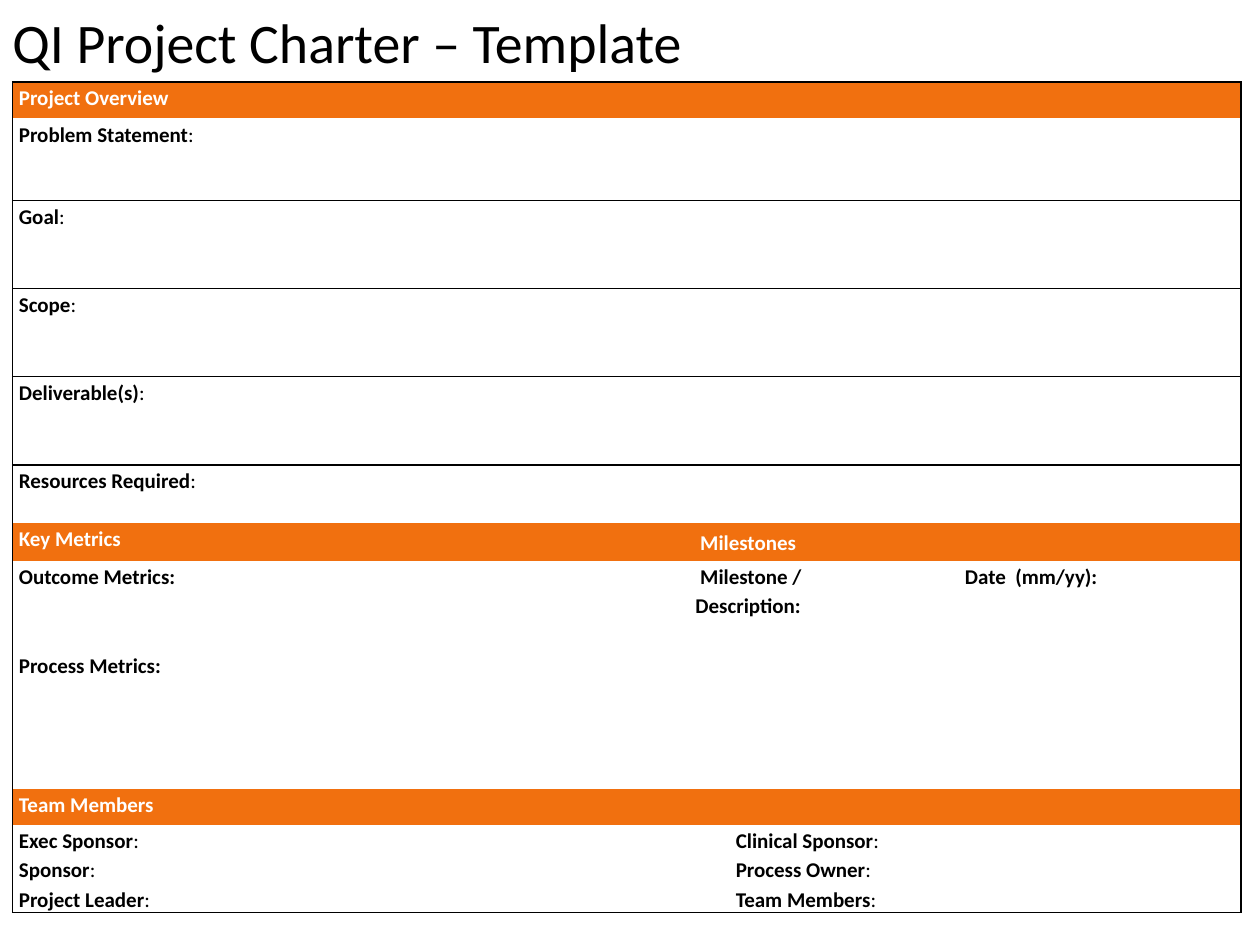
from lxml import etree
from pptx import Presentation
from pptx.dml.color import RGBColor
from pptx.enum.text import MSO_ANCHOR, PP_ALIGN
from pptx.oxml.ns import qn
from pptx.util import Inches, Pt

LEFT, CENTER = PP_ALIGN.LEFT, PP_ALIGN.CENTER
TOP, MIDDLE = MSO_ANCHOR.TOP, MSO_ANCHOR.MIDDLE
FONT = "Calibri"
COLORS = {"text": "000000", "header": "F1700F", "header_text": "FFFFFF",
          "cell": "FFFFFF", "line": "000000"}
COLS = [5.37, 0.32, 0.73, 3.33]
ROWS = [0.29, 0.65, 0.7, 0.7, 0.7, 0.46, 0.3, 0.71, 1.1, 0.29, 0.23, 0.23, 0.23]
OVERVIEW = ["Problem Statement", "Goal", "Scope", "Deliverable(s)", "Resources Required"]
TEAM = [("Exec Sponsor", "Clinical Sponsor"), ("Sponsor", "Process Owner"),
        ("Project Leader", "Team Members")]


def write(tf, text, size=12, color="text", bold=False, tail="", align=LEFT,
          spacing=None, gap=0):
    p = tf.paragraphs[0]
    p.alignment = align
    p.space_before = p.space_after = Pt(gap)
    if spacing:
        p.line_spacing = spacing
    for part, weight in ((text, bold), (tail, False)):
        if part:
            r = p.add_run()
            r.text = part
            r.font.name = FONT
            r.font.size = Pt(size)
            r.font.bold = weight
            r.font.color.rgb = RGBColor.from_string(COLORS[color])


def set_borders(cell, sides):
    tc_pr = cell._tc.get_or_add_tcPr()
    for side in "LRTB":
        ln = etree.SubElement(tc_pr, qn(f"a:ln{side}"), w=str(Pt(1)))
        if side in sides:
            fill = etree.SubElement(ln, qn("a:solidFill"))
            etree.SubElement(fill, qn("a:srgbClr"), val=COLORS["line"])
        else:
            etree.SubElement(ln, qn("a:noFill"))


def fill_block(table, row, col, width, text, height=1, lines="", header=False,
               anchor=TOP, **fmt):
    last_row, last_col = row + height - 1, col + width - 1
    cell = table.cell(row, col)
    if height * width > 1:
        cell.merge(table.cell(last_row, last_col))
    sides = lines + ("L" if col == 0 else "") + ("R" if last_col == len(COLS) - 1 else "")
    for i in range(row, last_row + 1):
        for j in range(col, last_col + 1):
            part = table.cell(i, j)
            set_borders(part, sides)
            part.fill.solid()
            part.fill.fore_color.rgb = RGBColor.from_string(
                COLORS["header" if header else "cell"])
            part.margin_left = part.margin_right = Inches(0.05)
            part.margin_top = part.margin_bottom = 0
    cell.vertical_anchor = anchor
    if header:
        fmt.update(color="header_text", gap=4)
    write(cell.text_frame, text, bold=True, spacing=1.15, **fmt)


def add_title(slide, left, top, width, height):
    tf = slide.shapes.add_textbox(left, top, width, height).text_frame
    tf.word_wrap = True
    write(tf, "QI Project Charter – Template", size=31.9)


def add_charter(slide, left, top, width, height):
    table = slide.shapes.add_table(len(ROWS), len(COLS), left, top, width, height).table
    table.first_row = table.horz_banding = False
    for column, size in zip(table.columns, COLS):
        column.width = Inches(size)
    for row, size in zip(table.rows, ROWS):
        row.height = Inches(size)

    fill_block(table, 0, 0, 4, "Project Overview", header=True, lines="T")
    for row, label in enumerate(OVERVIEW, 1):
        lines = ("T" if row > 1 else "") + ("B" if row < len(OVERVIEW) else "")
        fill_block(table, row, 0, 4, label, tail=":", lines=lines)

    fill_block(table, 6, 0, 1, "Key Metrics", header=True)
    fill_block(table, 6, 1, 3, " Milestones", header=True, anchor=MIDDLE)
    fill_block(table, 7, 0, 1, "Outcome Metrics:")
    fill_block(table, 8, 0, 1, "Process Metrics:")
    fill_block(table, 7, 1, 2, " Milestone / Description:", height=2)
    fill_block(table, 7, 3, 1, "Date  (mm/yy):", height=2, align=CENTER)

    fill_block(table, 9, 0, 4, "Team Members", header=True)
    for row, pair in enumerate(TEAM, 10):
        lines = "B" if row == len(ROWS) - 1 else ""
        for col, label in zip((0, 2), pair):
            fill_block(table, row, col, 2, label, tail=":", lines=lines, gap=2)


def main():
    prs = Presentation()
    prs.slide_width, prs.slide_height = Inches(10), Inches(7.5)
    slide = prs.slides.add_slide(prs.slide_layouts[6])
    add_title(slide, Inches(0), Inches(0.01), Inches(7.59), Inches(0.64))
    add_charter(slide, Inches(0.1), Inches(0.65), Inches(9.76), Inches(6.6))
    prs.save("out.pptx")


if __name__ == "__main__":
    main()
